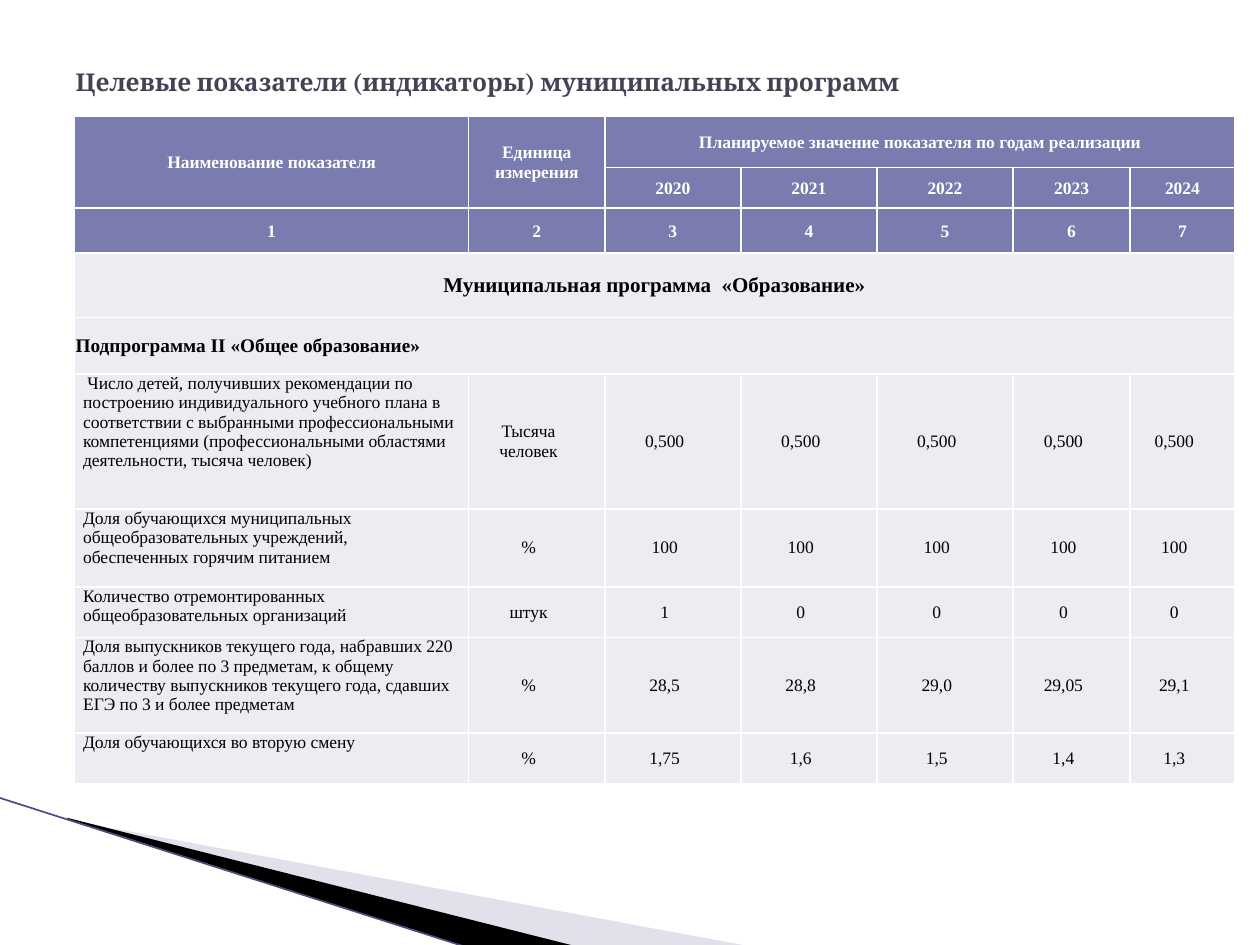
from dataclasses import dataclass

from lxml.etree import SubElement
from pptx import Presentation
from pptx.dml.color import RGBColor
from pptx.enum.shapes import MSO_CONNECTOR
from pptx.enum.text import MSO_ANCHOR, PP_ALIGN
from pptx.oxml.ns import qn
from pptx.util import Inches, Pt


@dataclass(frozen=True)
class Theme:
    title_font: str = "Cambria"
    table_font: str = "Times New Roman"
    title: str = "424456"
    header: str = "7A7BAE"
    body: str = "ECECF2"
    white: str = "FFFFFF"
    black: str = "000000"
    wedge: str = "B6B6D1"
    edge: str = "4C4C7F"
    title_size: int = 14
    program_size: int = 12
    section_size: int = 11
    text_size: int = 10


THEME = Theme()
COLUMN_WIDTHS = [3.13, 1.08, 1.08, 1.08, 1.08, 0.93, 0.83]
ROW_HEIGHTS = [0.41, 0.32, 0.36, 0.51, 0.45, 1.07, 0.62, 0.4, 0.76, 0.4]
HEADER_INSETS = (0.01, 0.01, 0.01, 0)
NAME_INSETS = (0.07, 0, 0.07, 0)
VALUE_INSETS = (0.07, 0, 0.2, 0)

YEARS = ["2020", "2021", "2022", "2023", "2024"]
INDICATORS = [
    (" Число детей, получивших рекомендации по построению индивидуального "
     "учебного плана в соответствии с выбранными профессиональными "
     "компетенциями (профессиональными областями деятельности, тысяча человек)",
     "Тысяча человек", ["0,500"] * 5),
    ("Доля обучающихся муниципальных\nобщеобразовательных учреждений,\n"
     "обеспеченных горячим питанием", "%", ["100"] * 5),
    ("Количество отремонтированных общеобразовательных организаций",
     "штук", ["1", "0", "0", "0", "0"]),
    ("Доля выпускников текущего года, набравших 220 баллов и более по 3 "
     "предметам, к общему количеству выпускников текущего года, сдавших ЕГЭ "
     "по 3 и более предметам", "%", ["28,5", "28,8", "29,0", "29,05", "29,1"]),
    ("Доля обучающихся во вторую смену", "%",
     ["1,75", "1,6", "1,5", "1,4", "1,3"]),
]


def rgb(value):
    return RGBColor.from_string(value)


def set_font(para, name, size, color, bold):
    font = para.font
    font.name, font.size, font.bold = name, Pt(size), bold
    font.color.rgb = rgb(color)


def add_wedge(page, points, color, opacity=100):
    corners = [(Inches(x), Inches(y)) for x, y in points]
    builder = page.shapes.build_freeform(*corners[0])
    builder.add_line_segments(corners[1:], close=True)
    wedge = builder.convert_to_shape()
    wedge.shadow.inherit = False
    wedge.fill.solid()
    wedge.fill.fore_color.rgb = rgb(color)
    wedge.line.fill.background()
    if opacity < 100:
        tint = wedge.fill._xPr.find(qn("a:solidFill"))[0]
        SubElement(tint, qn("a:alpha"), val=str(opacity * 1000))


def add_corner(page, left, top):
    """Wedges and edge line in the lower left corner."""
    def shift(points):
        return [(left + x, top + y) for x, y in points]

    add_wedge(page, shift([(0.55, 0.18), (5.95, 1.18), (4.56, 1.18), (0.55, 0.17)]),
              THEME.wedge, 40)
    add_wedge(page, shift([(0.53, 0.16), (4.57, 1.18), (3.72, 1.19), (0.54, 0.17)]),
              THEME.black)
    start, end = shift([(-0.01, 0), (3.71, 1.19)])
    edge = page.shapes.add_connector(
        MSO_CONNECTOR.STRAIGHT, *(Inches(value) for value in start + end))
    edge.line.color.rgb = rgb(THEME.edge)
    edge.line.width = Pt(0.95)
    SubElement(edge._element.spPr, qn("a:effectLst"))


def add_title(page, left, top, width, height):
    title = page.shapes.title
    title.left, title.top = Inches(left), Inches(top)
    title.width, title.height = Inches(width), Inches(height)
    frame = title.text_frame
    frame.text = "Целевые показатели (индикаторы) муниципальных программ"
    frame.vertical_anchor = MSO_ANCHOR.MIDDLE
    para = frame.paragraphs[0]
    para.alignment = PP_ALIGN.LEFT
    set_font(para, THEME.title_font, THEME.title_size, THEME.title, True)


def add_borders(cell):
    properties = cell._tc.get_or_add_tcPr()
    for side in ("lnL", "lnR", "lnT", "lnB"):
        line = SubElement(properties, qn(f"a:{side}"), w=str(Pt(1)))
        fill = SubElement(line, qn("a:solidFill"))
        SubElement(fill, qn("a:srgbClr"), val=THEME.white)


def paint_cell(cell, fill):
    add_borders(cell)
    cell.fill.solid()
    cell.fill.fore_color.rgb = rgb(fill)


def write_cell(cell, text, insets, color=THEME.black, size=THEME.text_size,
               bold=False, align=PP_ALIGN.CENTER, anchor=MSO_ANCHOR.MIDDLE):
    cell.text = text
    cell.vertical_anchor = anchor
    (cell.margin_left, cell.margin_top,
     cell.margin_right, cell.margin_bottom) = (Inches(inset) for inset in insets)
    for para in cell.text_frame.paragraphs:
        para.alignment = align
        set_font(para, THEME.table_font, size, color, bold)


def fill_header(table):
    last = len(COLUMN_WIDTHS) - 1
    for column in (0, 1):
        table.cell(0, column).merge(table.cell(1, column))
    table.cell(0, 2).merge(table.cell(0, last))
    labels = {
        (0, 0): "Наименование показателя",
        (0, 1): "Единица измерения",
        (0, 2): "Планируемое значение показателя по годам реализации",
    }
    labels.update({(1, 2 + i): year for i, year in enumerate(YEARS)})
    labels.update({(2, i): str(i + 1) for i in range(last + 1)})
    for position, label in labels.items():
        write_cell(table.cell(*position), label, HEADER_INSETS,
                   color=THEME.white, bold=True)


def fill_sections(table):
    sections = [
        ("Муниципальная программа  «Образование»", THEME.program_size, PP_ALIGN.CENTER),
        ("Подпрограмма II «Общее образование»", THEME.section_size, PP_ALIGN.LEFT),
    ]
    for row, (label, size, align) in enumerate(sections, start=3):
        table.cell(row, 0).merge(table.cell(row, len(COLUMN_WIDTHS) - 1))
        write_cell(table.cell(row, 0), label, HEADER_INSETS,
                   size=size, bold=True, align=align)


def fill_indicators(table):
    for row, (name, unit, values) in enumerate(INDICATORS, start=5):
        write_cell(table.cell(row, 0), name, NAME_INSETS,
                   align=PP_ALIGN.LEFT, anchor=MSO_ANCHOR.TOP)
        for column, value in enumerate([unit, *values], start=1):
            write_cell(table.cell(row, column), value, VALUE_INSETS)


def add_indicator_table(page, left, top):
    box = page.shapes.add_table(
        len(ROW_HEIGHTS), len(COLUMN_WIDTHS), Inches(left), Inches(top),
        Inches(sum(COLUMN_WIDTHS)), Inches(sum(ROW_HEIGHTS)))
    table = box.table
    table.first_row = table.horz_banding = False
    for column, width in zip(table.columns, COLUMN_WIDTHS):
        column.width = Inches(width)
    for index, (row, height) in enumerate(zip(table.rows, ROW_HEIGHTS)):
        row.height = Inches(height)
        for cell in row.cells:
            paint_cell(cell, THEME.header if index < 3 else THEME.body)
    fill_header(table)
    fill_sections(table)
    fill_indicators(table)


def main():
    deck = Presentation()
    deck.slide_width, deck.slide_height = Inches(10), Inches(7.5)
    page = deck.slides.add_slide(deck.slide_layouts[5])
    add_corner(page, 0, 6.33)
    add_title(page, 0.5, 0.3, 9, 0.69)
    add_indicator_table(page, 0.59, 0.92)
    deck.save("out.pptx")


if __name__ == "__main__":
    main()
